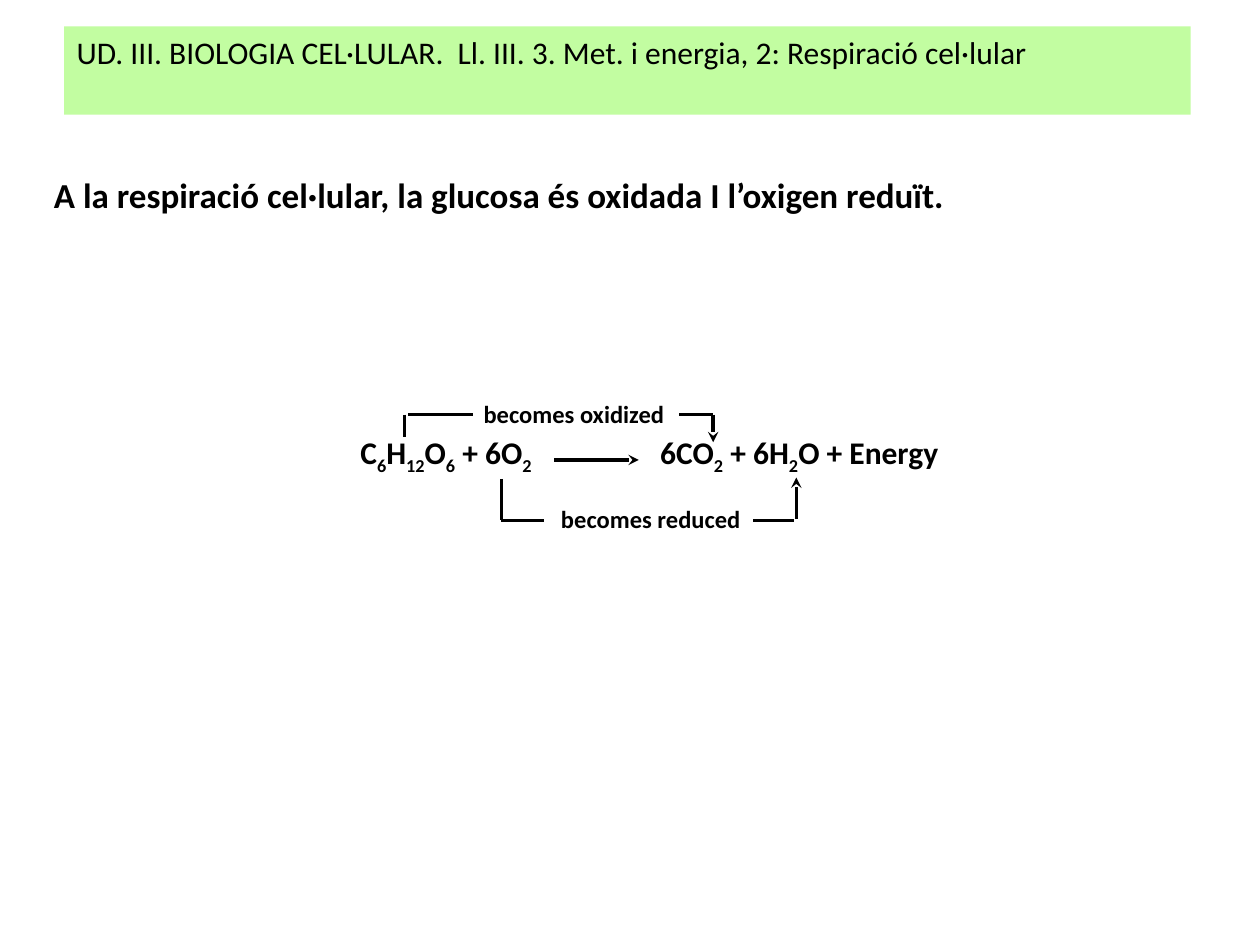
from typing import NamedTuple

from lxml.etree import SubElement as Sub
from pptx import Presentation
from pptx.dml.color import RGBColor
from pptx.enum.shapes import MSO_CONNECTOR as Link, MSO_SHAPE as Shape
from pptx.enum.text import MSO_ANCHOR as Anchor, PP_ALIGN as Align
from pptx.oxml.ns import qn
from pptx.util import Inches, Pt

BLACK = RGBColor(0x00, 0x00, 0x00)
GREEN = RGBColor(0xC2, 0xFD, 0xA1)
FONT = "Calibri"


class Box(NamedTuple):
    left: float
    top: float
    width: float
    height: float


class Label(NamedTuple):
    text: str
    box: Box


class Line(NamedTuple):
    x1: float
    y1: float
    x2: float
    y2: float
    arrow: bool = False


TITLE = "UD. III. BIOLOGIA CEL·LULAR.  Ll. III. 3. Met. i energia, 2: Respiració cel·lular"
CLAIM = "A la respiració cel·lular, la glucosa és oxidada I l’oxigen reduït."
# Every second part is a subscript; the tab leaves room for the arrow.
PARTS = "C|6|H|12|O|6| + 6O|2|\t6CO|2| + 6H|2|O + Energy".split("|")

LABELS = [
    Label("becomes oxidized", Box(3.62, 3.12, 1.87, 0.33)),
    Label("becomes reduced", Box(4.24, 3.95, 1.85, 0.33)),
]

HIGH, LOW = 3.29, 4.13
LINES = [
    Line(4.4, 3.65, 5.07, 3.65, arrow=True),
    Line(3.24, HIGH, 3.75, HIGH),
    Line(3.21, HIGH, 3.21, 3.47),
    Line(5.39, HIGH, 5.66, HIGH),
    Line(5.66, HIGH, 5.66, 3.51, arrow=True),
    Line(3.98, LOW, 4.32, LOW),
    Line(5.98, LOW, 6.3, LOW),
    Line(6.32, 4.12, 6.32, 3.79, arrow=True),
    Line(3.98, 3.8, 3.98, LOW),
]


def style(run, size: float, bold: bool = True) -> None:
    run.font.name = FONT
    run.font.size = Pt(size)
    run.font.bold = bold
    run.font.color.rgb = BLACK


def add_text(slide, text: str, box: Box, size: float, wrap: bool = True):
    frame = slide.shapes.add_textbox(*map(Inches, box)).text_frame
    frame.word_wrap = wrap
    para = frame.paragraphs[0]
    para.text = text
    for run in para.runs:
        style(run, size)
    return frame


def add_title(slide) -> None:
    bar = slide.shapes.add_shape(Shape.RECTANGLE, *map(Inches, Box(0.51, 0.21, 8.94, 0.7)))
    bar.shadow.inherit = False
    bar.fill.solid()
    bar.fill.fore_color.rgb = GREEN
    bar.line.fill.background()
    frame = bar.text_frame
    frame.word_wrap = True
    frame.vertical_anchor = Anchor.TOP
    para = frame.paragraphs[0]
    para.text = TITLE
    para.alignment = Align.LEFT
    style(para.runs[0], 18, bold=False)


def add_formula(slide) -> None:
    frame = add_text(slide, "", Box(1.61, 3.41, 7.08, 0.4), 18)
    frame.margin_left = Inches(1.25)
    frame.vertical_anchor = Anchor.MIDDLE
    para = frame.paragraphs[0]
    stops = Sub(para._p.get_or_add_pPr(), qn("a:tabLst"))
    Sub(stops, qn("a:tab"), pos=str(Inches(2.38)), algn="l")
    for index, part in enumerate(PARTS):
        run = para.add_run()
        run.text = part
        style(run, 18)
        if index % 2:
            run._r.get_or_add_rPr().set("baseline", "-25000")


def add_label(slide, label: Label) -> None:
    frame = add_text(slide, label.text, label.box, 14, wrap=False)
    frame.vertical_anchor = Anchor.MIDDLE
    frame.paragraphs[0].alignment = Align.CENTER


def add_line(slide, line: Line) -> None:
    ends = map(Inches, (line.x1, line.y1, line.x2, line.y2))
    link = slide.shapes.add_connector(Link.STRAIGHT, *ends)
    link.line.color.rgb = BLACK
    link.line.width = Pt(2)
    if line.arrow:
        Sub(link.line._get_or_add_ln(), qn("a:tailEnd"), type="stealth")
    Sub(link._element.spPr, qn("a:effectLst"))


def main() -> None:
    deck = Presentation()
    deck.slide_width, deck.slide_height = Inches(10), Inches(7.5)
    slide = deck.slides.add_slide(deck.slide_layouts[6])
    add_title(slide)
    add_text(slide, CLAIM, Box(0.33, 1.33, 9.33, 1.07), 20)
    add_formula(slide)
    for label in LABELS:
        add_label(slide, label)
    for line in LINES:
        add_line(slide, line)
    deck.save("out.pptx")


if __name__ == "__main__":
    main()
